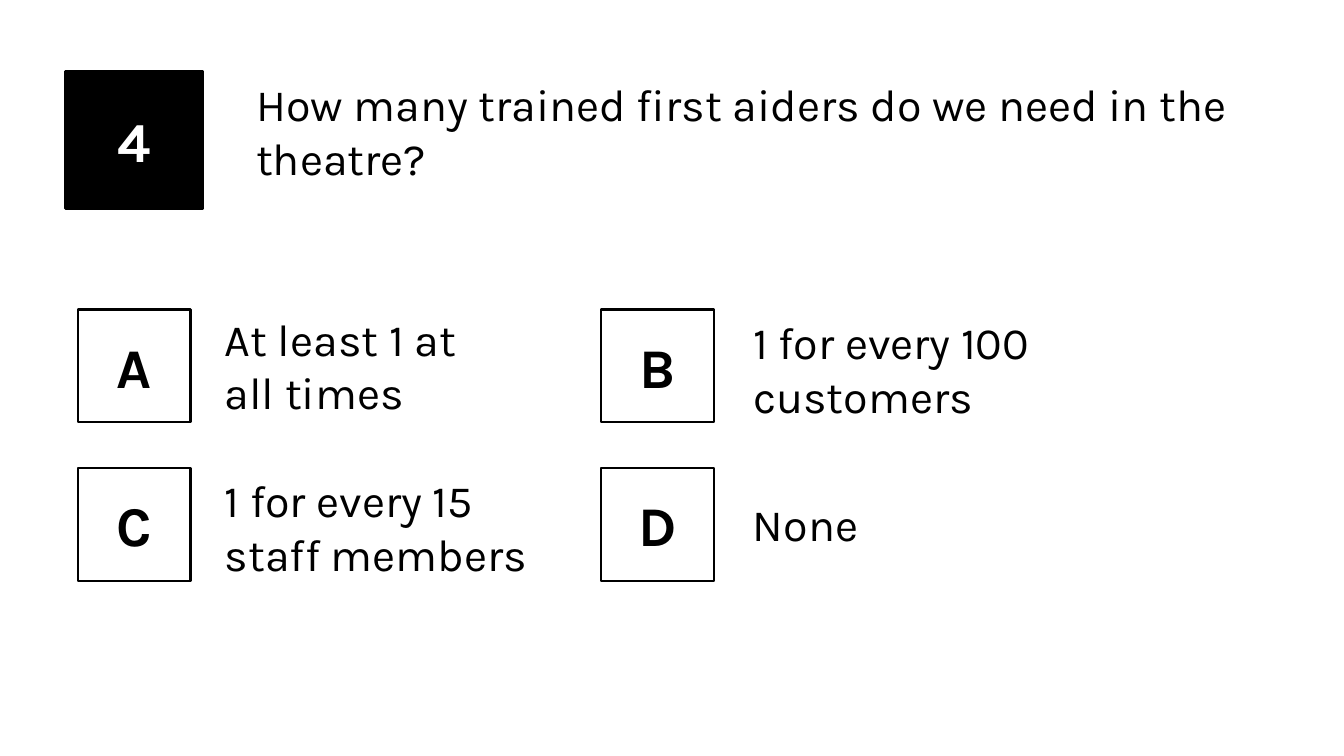
from dataclasses import dataclass

from pptx import Presentation
from pptx import util as u
from pptx.dml.color import RGBColor
from pptx.enum import shapes, text


@dataclass(frozen=True)
class Theme:
    font: str = "Karla"
    ink: str = "000000"
    paper: str = "FFFFFF"
    body: int = 32
    mark: int = 40
    edge: float = 1.5


def write(frame, words, *, font, size, color, bold=False,
          align=text.PP_ALIGN.LEFT, anchor=text.MSO_ANCHOR.TOP):
    frame.word_wrap = True
    frame.auto_size = text.MSO_AUTO_SIZE.NONE
    frame.vertical_anchor = anchor
    para = frame.paragraphs[0]
    para.alignment = align
    para.line_spacing = 1.0
    run = para.add_run()
    run.text = words
    run.font.name = font
    run.font.size = u.Pt(size)
    run.font.bold = bold
    run.font.color.rgb = RGBColor.from_string(color)


class Quiz:
    def __init__(self, deck, theme):
        self.theme = theme
        self.slide = deck.slides.add_slide(deck.slide_layouts[5])

    def body(self, frame, words):
        t = self.theme
        write(frame, words, font=t.font, size=t.body, color=t.ink)

    def title(self, words, x, y, w, h):
        box = self.slide.shapes.title
        box.left, box.top, box.width, box.height = map(u.Inches, (x, y, w, h))
        self.body(box.text_frame, words)

    def label(self, words, x, y, w, h):
        box = self.slide.shapes.add_textbox(*map(u.Inches, (x, y, w, h)))
        self.body(box.text_frame, words)

    def square(self, mark, x, y, side, fill, color):
        t = self.theme
        box = self.slide.shapes.add_shape(
            shapes.MSO_SHAPE.RECTANGLE, *map(u.Inches, (x, y, side, side)))
        box.shadow.inherit = False
        box.fill.solid()
        box.fill.fore_color.rgb = RGBColor.from_string(fill)
        box.line.color.rgb = RGBColor.from_string(t.ink)
        box.line.width = u.Pt(t.edge)
        write(box.text_frame, mark, font=t.font, size=t.mark, color=color,
              bold=True, align=text.PP_ALIGN.CENTER,
              anchor=text.MSO_ANCHOR.MIDDLE)


def main():
    deck = Presentation()
    deck.slide_width, deck.slide_height = u.Inches(13.33), u.Inches(7.5)
    theme = Theme()
    quiz = Quiz(deck, theme)

    # Question and its number
    quiz.title("How many trained first aiders do we need in the theatre?",
               2.44, 0.71, 10.24, 1.18)
    quiz.square("4", 0.65, 0.71, 1.36, theme.ink, theme.paper)

    # Answers in a two-by-two grid: words, top, width, height
    answers = [
        ("At least 1 at all times", 3.04, 2.86, 1.18),
        ("1 for every 100 customers", 3.07, 3.52, 1.18),
        ("1 for every 15 staff members", 4.64, 3.36, 1.18),
        ("None", 4.88, 4.93, 0.64),
    ]
    marks_x, words_x, rows_y = (0.77, 5.96), (2.13, 7.37), (3.07, 4.64)
    for i, (words, top, wide, high) in enumerate(answers):
        row, col = divmod(i, 2)
        quiz.square("ABCD"[i], marks_x[col], rows_y[row], 1.12,
                    theme.paper, theme.ink)
        quiz.label(words, words_x[col], top, wide, high)

    deck.save("out.pptx")


if __name__ == "__main__":
    main()
